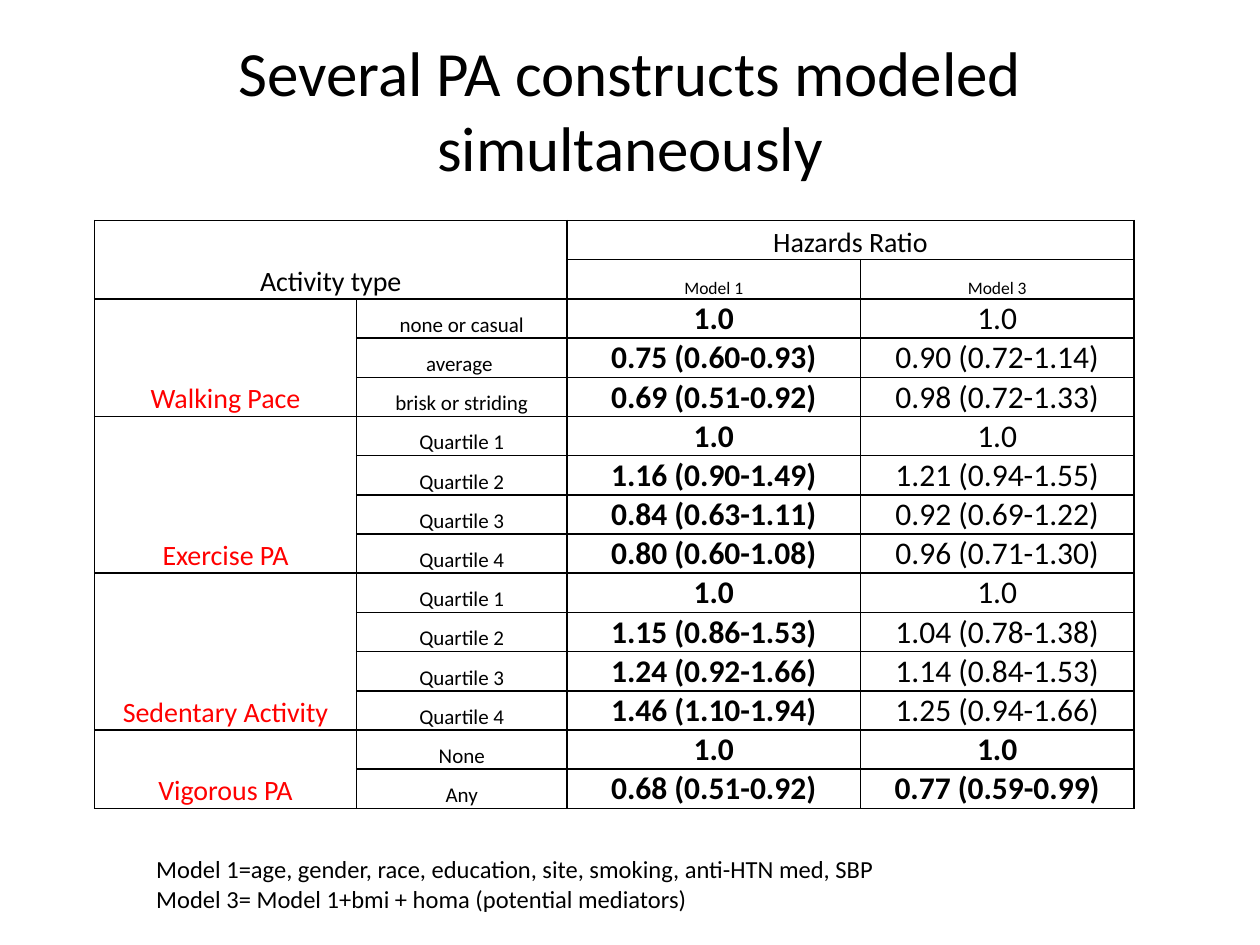
from lxml import etree
from pptx import Presentation
from pptx.dml.color import RGBColor
from pptx.enum.text import MSO_ANCHOR, PP_ALIGN
from pptx.oxml.ns import qn
from pptx.util import Inches, Pt

CENTER, LEFT = PP_ALIGN.CENTER, PP_ALIGN.LEFT
BOTTOM, MIDDLE = MSO_ANCHOR.BOTTOM, MSO_ANCHOR.MIDDLE
THEME = {
    "font": "Calibri", "text": "000000", "accent": "FF0000", "border": 1,
    "title": 36, "head": 16, "value": 18, "level": 12, "model": 10, "note": 14,
}
CELL = {"margin_left": Inches(0.07), "margin_right": Inches(0.07),
        "margin_top": 0, "margin_bottom": 0, "vertical_anchor": BOTTOM}


def write(tf, text, size, color="text", bold=False, align=CENTER):
    p = tf.paragraphs[0]
    p.alignment = align
    r = p.add_run()
    r.text = text
    fmt = {"name": THEME["font"], "size": Pt(THEME[size]), "bold": bold}
    for key, value in fmt.items():
        setattr(r.font, key, value)
    r.font.color.rgb = RGBColor.from_string(THEME[color])


def grid(s, left, top, widths, row_h, rows, bordered):
    frame = s.shapes.add_table(rows, len(widths), Inches(left), Inches(top),
                               Inches(sum(widths)), Inches(row_h * rows))
    tbl = frame.table
    tbl.first_row = tbl.horz_banding = False
    for col, width in zip(tbl.columns, widths):
        col.width = Inches(width)
    for row in tbl.rows:
        row.height = Inches(row_h)
    for cell in tbl.iter_cells():
        for key, value in CELL.items():
            setattr(cell, key, value)
        tcPr = cell._tc.get_or_add_tcPr()
        for side in ("lnL", "lnR", "lnT", "lnB"):
            ln = etree.SubElement(tcPr, qn("a:" + side), w=str(Pt(THEME["border"])))
            if bordered:
                fill = etree.SubElement(ln, qn("a:solidFill"))
                etree.SubElement(fill, qn("a:srgbClr"), val=THEME["text"])
            else:
                etree.SubElement(ln, qn("a:noFill"))
        cell.fill.background()
    return tbl


prs = Presentation()
prs.slide_width, prs.slide_height = Inches(10), Inches(7.5)
s = prs.slides.add_slide(prs.slide_layouts[5])

title = s.shapes.title
title.left, title.width = int(prs.slide_width * 0.05), int(prs.slide_width * 0.9)
title.top, title.height = int(prs.slide_height * 0.04), int(prs.slide_height * 0.15)
title.text_frame.vertical_anchor = MIDDLE
title.text_frame.word_wrap = True
write(title.text_frame, "Several PA constructs modeled simultaneously", "title")

groups = [
    ("Walking Pace", [
        ("none or casual", "1.0", "1.0"),
        ("average ", "0.75 (0.60-0.93)", "0.90 (0.72-1.14)"),
        ("brisk or striding", "0.69 (0.51-0.92)", "0.98 (0.72-1.33)")]),
    ("Exercise PA", [
        ("Quartile 1", "1.0", "1.0"),
        ("Quartile 2", "1.16 (0.90-1.49)", "1.21 (0.94-1.55)"),
        ("Quartile 3", "0.84 (0.63-1.11)", "0.92 (0.69-1.22)"),
        ("Quartile 4", "0.80 (0.60-1.08)", "0.96 (0.71-1.30)")]),
    ("Sedentary Activity", [
        ("Quartile 1", "1.0", "1.0"),
        ("Quartile 2", "1.15 (0.86-1.53)", "1.04 (0.78-1.38)"),
        ("Quartile 3", "1.24 (0.92-1.66)", "1.14 (0.84-1.53)"),
        ("Quartile 4", "1.46 (1.10-1.94)", "1.25 (0.94-1.66)")]),
    ("Vigorous PA", [
        ("None", "1.0", "1.0"),
        ("Any", "0.68 (0.51-0.92)", "0.77 (0.59-0.99)")]),
]
row_count = 2 + sum(len(levels) for _, levels in groups)
tbl = grid(s, 0.75, 1.75, [2.08, 1.67, 2.33, 2.17], 4.67 / row_count, row_count, True)

tbl.cell(0, 0).merge(tbl.cell(1, 1))
tbl.cell(0, 2).merge(tbl.cell(0, 3))
write(tbl.cell(0, 0).text_frame, "Activity type", "head")
write(tbl.cell(0, 2).text_frame, "Hazards Ratio", "head")
write(tbl.cell(1, 2).text_frame, "Model 1", "model")
write(tbl.cell(1, 3).text_frame, "Model 3", "model")

row = 2
for activity, levels in groups:
    tbl.cell(row, 0).merge(tbl.cell(row + len(levels) - 1, 0))
    write(tbl.cell(row, 0).text_frame, activity, "head", "accent")
    for level, model_1, model_3 in levels:
        write(tbl.cell(row, 1).text_frame, level, "level")
        write(tbl.cell(row, 2).text_frame, model_1, "value", bold=True)
        write(tbl.cell(row, 3).text_frame, model_3, "value", bold=activity == "Vigorous PA")
        row += 1

notes = ["", "Model 1=age, gender, race, education, site, smoking, anti-HTN med, SBP",
         "Model 3= Model 1+bmi + homa (potential mediators)"]
key = grid(s, 1.17, 6.5, [6.67], 0.24, len(notes), False)
for i, note in enumerate(notes):
    write(key.cell(i, 0).text_frame, note, "note", align=LEFT)

prs.save("out.pptx")
